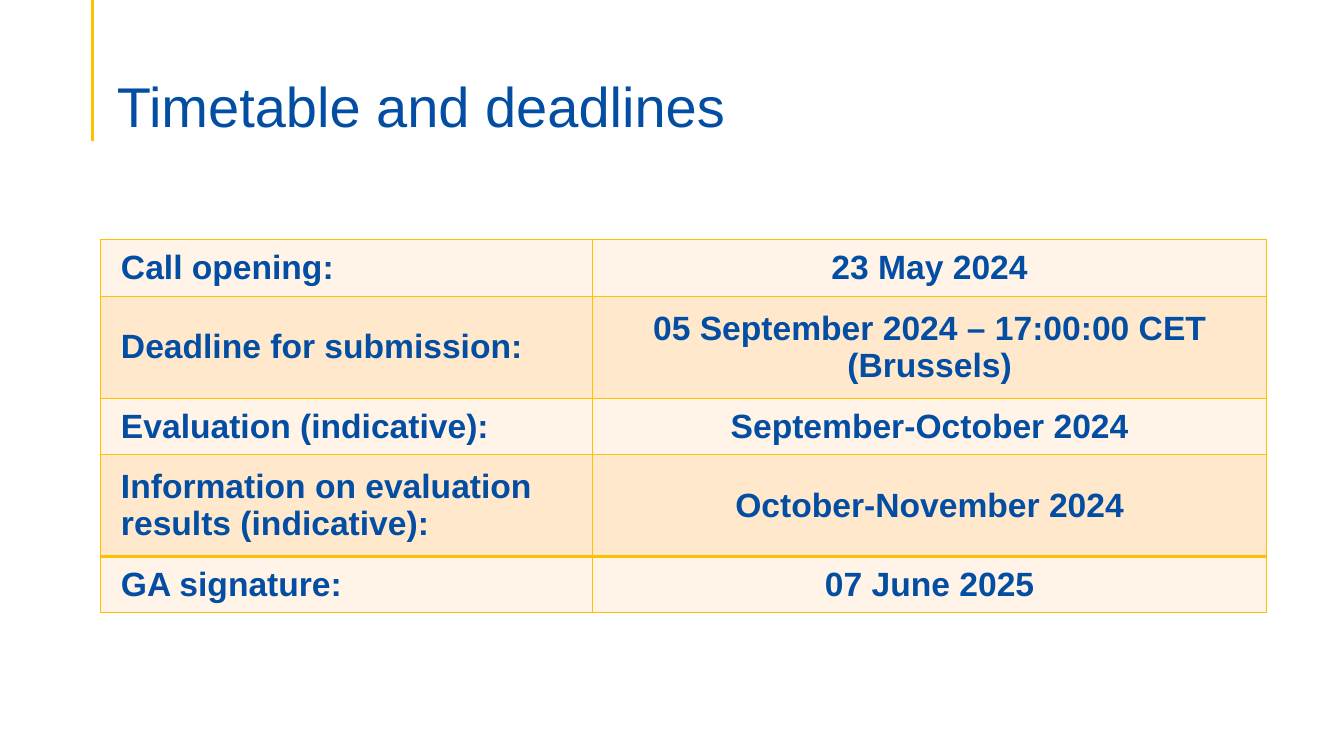
from dataclasses import dataclass

from lxml import etree
from pptx import Presentation
from pptx import util as u
from pptx.dml.color import RGBColor
from pptx.enum import shapes, text
from pptx.oxml.ns import qn

# Content
TITLE = "Timetable and deadlines"
MILESTONES = [
    ("Call opening:", "23 May 2024"),
    ("Deadline for submission:", "05 September 2024 – 17:00:00 CET (Brussels)"),
    ("Evaluation (indicative):", "September-October 2024"),
    ("Information on evaluation results (indicative):", "October-November 2024"),
    ("GA signature:", "07 June 2025"),
]


@dataclass(frozen=True)
class Theme:
    font: str = "Arial"
    ink: str = "034EA2"
    accent: str = "FFC000"
    bands: tuple = ("FFF4E7", "FFE8CC")
    title_size: int = 40
    cell_size: int = 24
    rule_width: float = 2.25
    border_width: int = 1
    heavy_border_width: int = 2


THEME = Theme()

# Layout in inches
SLIDE_W, SLIDE_H = 13.33, 7.5
RULE_X, RULE_END = 0.92, 1.4
TITLE_BOX = (1.06, 0.53, 11.5, 0.86)
TABLE_X, TABLE_Y = 1, 2.38
COLUMNS = (4.88, 6.68)
ROW_HEIGHTS = (0.56, 1.01)  # alternating one-line and two-line rows
CELL_INSET = 0.2


def write(frame, words, size, bold=False, align=text.PP_ALIGN.LEFT,
          anchor=text.MSO_ANCHOR.MIDDLE, spacing=1.0):
    frame.text = words
    frame.word_wrap = True
    frame.vertical_anchor = anchor
    paragraph = frame.paragraphs[0]
    paragraph.alignment = align
    paragraph.line_spacing = spacing
    font = paragraph.runs[0].font
    font.name, font.size, font.bold = THEME.font, u.Pt(size), bold
    font.color.rgb = RGBColor.from_string(THEME.ink)


def add_borders(cell, top_width):
    properties = cell._tc.get_or_add_tcPr()
    for side in "LRTB":
        width = top_width if side == "T" else THEME.border_width
        line = etree.SubElement(properties, qn(f"a:ln{side}"), w=str(u.Pt(width)))
        fill = etree.SubElement(line, qn("a:solidFill"))
        etree.SubElement(fill, qn("a:srgbClr"), val=THEME.accent)


def add_heading(slide):
    # Vertical rule
    rule = slide.shapes.add_connector(
        shapes.MSO_CONNECTOR.STRAIGHT,
        u.Inches(RULE_X), 0, u.Inches(RULE_X), u.Inches(RULE_END))
    rule.line.color.rgb = RGBColor.from_string(THEME.accent)
    rule.line.width = u.Pt(THEME.rule_width)
    etree.SubElement(rule._element.spPr, qn("a:effectLst"))

    # Title
    title = slide.shapes.title
    title.left, title.top, title.width, title.height = map(u.Inches, TITLE_BOX)
    frame = title.text_frame
    frame.auto_size = text.MSO_AUTO_SIZE.NONE
    frame.margin_left = frame.margin_right = u.Inches(0.1)
    frame.margin_top, frame.margin_bottom = u.Inches(0.05), 0
    write(frame, TITLE, THEME.title_size, anchor=text.MSO_ANCHOR.BOTTOM, spacing=0.9)


def add_timetable(slide):
    heights = [ROW_HEIGHTS[i % 2] for i in range(len(MILESTONES))]
    timetable = slide.shapes.add_table(
        len(MILESTONES), len(COLUMNS), u.Inches(TABLE_X), u.Inches(TABLE_Y),
        u.Inches(sum(COLUMNS)), u.Inches(sum(heights))).table
    timetable.first_row = timetable.horz_banding = False
    for column, width in zip(timetable.columns, COLUMNS):
        column.width = u.Inches(width)

    aligns = (text.PP_ALIGN.LEFT, text.PP_ALIGN.CENTER)
    last = len(MILESTONES) - 1
    for r, milestone in enumerate(MILESTONES):
        timetable.rows[r].height = u.Inches(heights[r])
        for c, words in enumerate(milestone):
            cell = timetable.cell(r, c)
            cell.margin_left = cell.margin_right = u.Inches(CELL_INSET)
            cell.margin_top = cell.margin_bottom = 0
            cell.vertical_anchor = text.MSO_ANCHOR.MIDDLE
            write(cell.text_frame, words, THEME.cell_size, bold=True, align=aligns[c])
            # A heavier line sets off the closing row, and the row above shares it
            add_borders(cell, THEME.heavy_border_width if r == last
                        else THEME.border_width)
            cell.fill.solid()
            cell.fill.fore_color.rgb = RGBColor.from_string(THEME.bands[r % 2])


def main():
    deck = Presentation()
    deck.slide_width, deck.slide_height = u.Inches(SLIDE_W), u.Inches(SLIDE_H)
    slide = deck.slides.add_slide(deck.slide_layouts[5])  # title only
    add_heading(slide)
    add_timetable(slide)
    deck.save("out.pptx")


if __name__ == "__main__":
    main()
